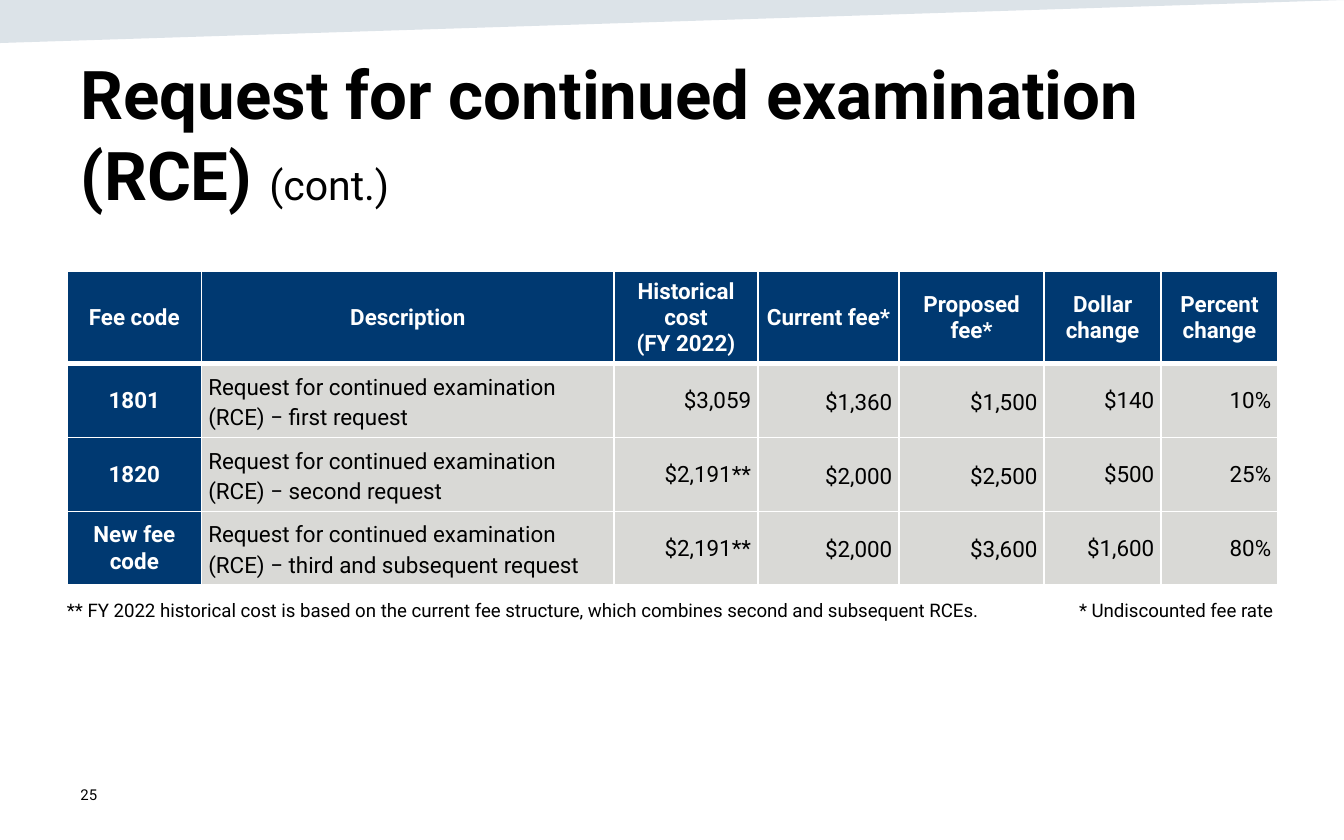
"""Build the slide on fees for a request for continued examination."""
from dataclasses import dataclass

from lxml.etree import SubElement
from pptx import Presentation
from pptx.dml.color import RGBColor
from pptx.enum.text import MSO_ANCHOR as Anchor
from pptx.enum.text import MSO_AUTO_SIZE as Fit
from pptx.enum.text import PP_ALIGN as Align
from pptx.oxml.ns import qn
from pptx.util import Inches, Pt

NAVY = RGBColor(0x00, 0x39, 0x71)
GREY = RGBColor(0xD9, 0xD9, 0xD6)
TEAL = RGBColor(0x16, 0x44, 0x69)
WHITE = RGBColor(0xFF, 0xFF, 0xFF)
BLACK = RGBColor(0x00, 0x00, 0x00)
FONT = "Roboto"

WIDTHS = (1, 3.07, 1.07, 1.05, 1.08, 0.87, 0.87)
HEIGHTS = (0.68, 0.54, 0.54, 0.54)
ROWS = (
    ("Fee code", "Description", "Historical cost\n(FY 2022)", "Current fee*",
     "Proposed fee*", "Dollar change", "Percent change"),
    ("1801", "Request for continued examination (RCE) ‒ first request",
     "$3,059", "$1,360", "$1,500", "$140", "10%"),
    ("1820", "Request for continued examination (RCE) ‒ second request",
     "$2,191**", "$2,000", "$2,500", "$500", "25%"),
    ("New fee code",
     "Request for continued examination (RCE) ‒ third and subsequent request",
     "$2,191**", "$2,000", "$3,600", "$1,600", "80%"),
)
LOOSE = (1, 3, 4)


@dataclass
class Note:
    """A line of small text and its box."""
    text: str
    left: float
    top: float
    width: float
    height: float
    size: int = 10
    align: Align = Align.LEFT
    anchor: Anchor = Anchor.TOP


NOTES = (
    Note("25", 0.5, 5.75, 2.25, 0.33, size=8, anchor=Anchor.MIDDLE),
    Note("* Undiscounted fee rate", 0.57, 4.41, 9, 0.27, align=Align.RIGHT),
    Note("** FY 2022 historical cost is based on the current fee structure, "
         "which combines second and subsequent RCEs.", 0.4, 4.41, 9, 0.27),
)


def style(font, size: int, color: RGBColor, bold: bool = False) -> None:
    """Set the face, size, colour and weight of a font."""
    font.name, font.size, font.bold = FONT, Pt(size), bold
    font.color.rgb = color


def add_band(slide) -> None:
    """Draw the pale wedge along the top edge."""
    pen = slide.shapes.build_freeform(0, 0, scale=1.0)
    pen.add_line_segments([(0, Inches(0.32)), (Inches(10), 0)])
    band = pen.convert_to_shape()
    band.shadow.inherit = False
    band.line.fill.background()
    band.fill.solid()
    band.fill.fore_color.rgb = TEAL
    color = next(band.element.spPr.iter(qn("a:srgbClr")))
    SubElement(color, qn("a:alpha"), val="15000")


def add_title(slide) -> None:
    """Fill the title placeholder."""
    title = slide.shapes.title
    title.left, title.top = Inches(0.5), Inches(0.34)
    title.width, title.height = Inches(9), Inches(1.04)
    frame = title.text_frame
    frame.auto_size, frame.vertical_anchor = Fit.NONE, Anchor.TOP
    line = frame.paragraphs[0]
    line.alignment = Align.LEFT
    parts = (("Request for continued examination (RCE) ", 36, True),
             ("(cont.)", 22, False))
    for text, size, bold in parts:
        run = line.add_run()
        run.text = text
        style(run.font, size, BLACK, bold)


def add_note(slide, note: Note) -> None:
    """Add one line of small text."""
    box = slide.shapes.add_textbox(Inches(note.left), Inches(note.top),
                                   Inches(note.width), Inches(note.height))
    frame = box.text_frame
    frame.word_wrap, frame.vertical_anchor = True, note.anchor
    line = frame.paragraphs[0]
    line.text, line.alignment = note.text, note.align
    style(line.font, note.size, BLACK)


def add_edges(cell, base: float) -> None:
    """Rule a cell in white, with the given weight at its base."""
    props = cell._tc.get_or_add_tcPr()
    for side, weight in (("L", 1), ("R", 1), ("T", 1), ("B", base)):
        edge = SubElement(props, qn(f"a:ln{side}"), w=str(Pt(weight)))
        fill = SubElement(edge, qn("a:solidFill"))
        SubElement(fill, qn("a:srgbClr"), val=str(WHITE))


def fill_cell(cell, text: str, row: int, col: int) -> None:
    """Write and format one table cell."""
    head = row == 0 or col == 0
    add_edges(cell, 3 if row == 0 else 1)
    cell.fill.solid()
    cell.fill.fore_color.rgb = NAVY if head else GREY
    cell.vertical_anchor = Anchor.MIDDLE
    cell.margin_left = cell.margin_right = Inches(0.05)
    cell.margin_top = cell.margin_bottom = Inches(0.05)
    cell.text = text
    for line in cell.text_frame.paragraphs:
        style(line.font, 12, WHITE if head else BLACK, head)
        if head:
            line.alignment = Align.CENTER
        else:
            line.alignment = Align.LEFT if col == 1 else Align.RIGHT
        if row and col in LOOSE:
            line.line_spacing, line.space_after = 1.15, Pt(3)
        elif row:
            line.space_before = line.space_after = Pt(6)


def add_fees(slide) -> None:
    """Add the table of fees."""
    table = slide.shapes.add_table(
        len(ROWS), len(WIDTHS), Inches(0.5), Inches(2.02),
        Inches(sum(WIDTHS)), Inches(sum(HEIGHTS))).table
    for col, width in zip(table.columns, WIDTHS):
        col.width = Inches(width)
    for row, height in zip(table.rows, HEIGHTS):
        row.height = Inches(height)
    for row, texts in enumerate(ROWS):
        for col, text in enumerate(texts):
            fill_cell(table.cell(row, col), text, row, col)


def main() -> None:
    """Build and save the slide."""
    deck = Presentation()
    deck.slide_width, deck.slide_height = Inches(10), Inches(6.25)
    slide = deck.slides.add_slide(deck.slide_layouts[5])
    add_band(slide)
    add_title(slide)
    add_fees(slide)
    for note in NOTES:
        add_note(slide, note)
    deck.save("out.pptx")


if __name__ == "__main__":
    main()
